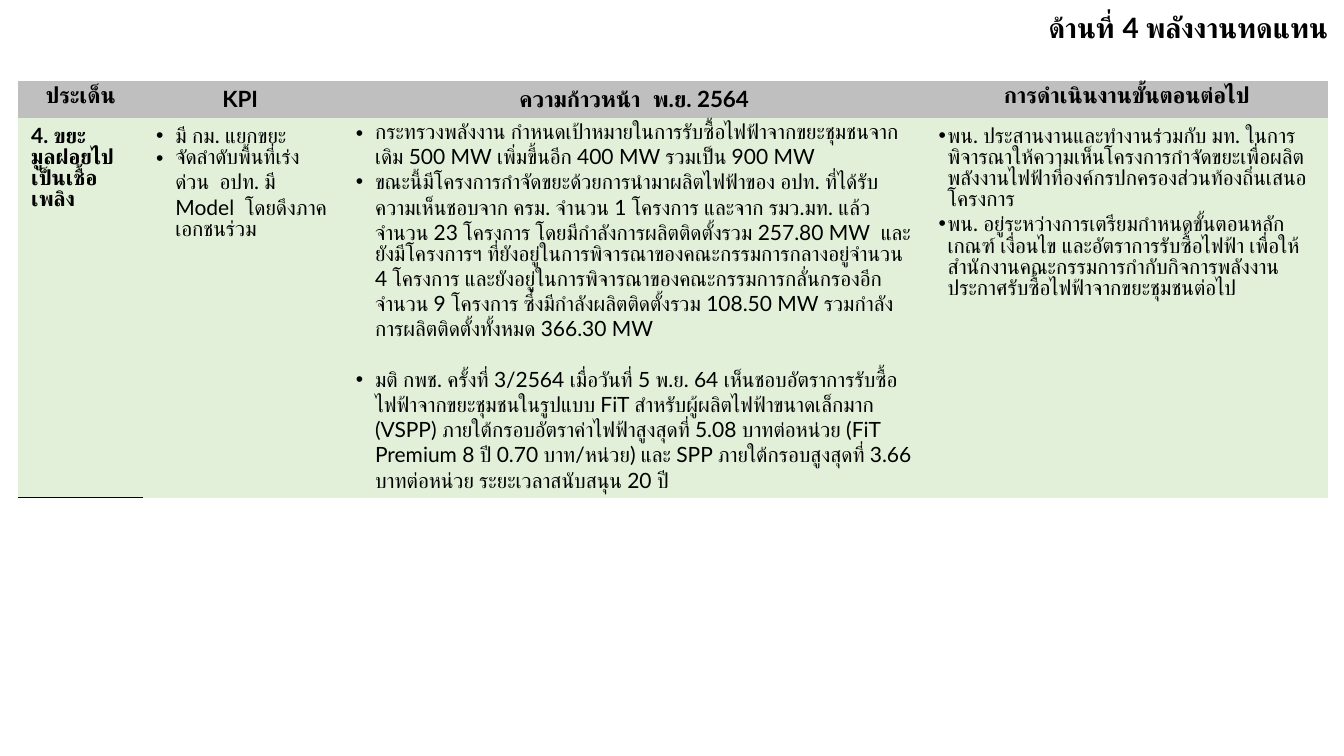
import pptx
import pptx.util
import pptx.dml.color
import pptx.enum.text
import pptx.oxml
import pptx.oxml.ns

COLOURS = {"text": "000000", "header": "BFBFBF", "body": "E2F0D9"}
ALIGN = pptx.enum.text.PP_ALIGN
PLAIN_TABLE = "{2D5ABB26-0587-4C30-8999-92F81FD0307C}"


class SlideBuilder:
    font = "Lato"
    scale = 9144

    def __init__(self, deck):
        self.page = deck.slides.add_slide(deck.slide_layouts[6])

    @classmethod
    def px(cls, length):
        return pptx.util.Emu(length * cls.scale)

    @staticmethod
    def colour(name):
        return pptx.dml.color.RGBColor.from_string(COLOURS[name])

    @staticmethod
    def xml(tag, attributes, content=""):
        namespace = pptx.oxml.ns.nsdecls("a")
        return pptx.oxml.parse_xml(f"<a:{tag} {namespace} {attributes}>{content}</a:{tag}>")

    def apply(self, target, values):
        for name, value in values.items():
            setattr(target, name, value)

    def margins(self, target, across, down):
        self.apply(target, {
            "margin_left": self.px(across), "margin_right": self.px(across),
            "margin_top": self.px(down), "margin_bottom": self.px(down),
        })

    def paragraphs(self, frame, texts, size, bold=False, align=ALIGN.LEFT, indent=0, gaps=None):
        for index, text in enumerate(texts):
            para = frame.paragraphs[0] if index == 0 else frame.add_paragraph()
            self.apply(para, {
                "alignment": align,
                "space_before": pptx.util.Pt((gaps or {}).get(index, 0)),
            })
            if indent:
                properties = para._p.get_or_add_pPr()
                properties.set("marL", str(self.px(indent)))
                properties.set("indent", str(-self.px(indent)))
                properties.append(self.xml("buFont", 'typeface="Arial"'))
                properties.append(self.xml("buChar", 'char="•"'))
            span = para.add_run()
            self.apply(span, {"text": text})
            self.apply(span.font, {"size": pptx.util.Pt(size), "bold": bold, "name": self.font})
            span.font.color.rgb = self.colour("text")

    def text(self, left, top, width, height, words, size, **style):
        box = self.page.shapes.add_textbox(*map(self.px, (left, top, width, height)))
        box.text_frame.word_wrap = True
        self.margins(box.text_frame, 17, 9)
        self.paragraphs(box.text_frame, [words], size, **style)

    def table(self, left, top, widths, heights):
        area = (left, top, sum(widths), sum(heights))
        frame = self.page.shapes.add_table(len(heights), len(widths), *map(self.px, area))
        grid = frame.table
        self.apply(grid, {"first_row": False, "horz_banding": False})
        grid._tbl.tblPr.find(pptx.oxml.ns.qn("a:tableStyleId")).text = PLAIN_TABLE
        for column, width in zip(grid.columns, widths):
            column.width = self.px(width)
        for row, height in zip(grid.rows, heights):
            row.height = self.px(height)
        return grid

    def cell(self, cell, texts, fill, size, **style):
        cell.fill.solid()
        cell.fill.fore_color.rgb = self.colour(fill)
        self.margins(cell, 13, 5)
        self.paragraphs(cell.text_frame, texts, size, **style)

    def bottom_border(self, cell, points):
        line = f'<a:solidFill><a:srgbClr val="{COLOURS["text"]}"/></a:solidFill>'
        width = pptx.util.Pt(points)
        cell._tc.get_or_add_tcPr().insert(0, self.xml("lnB", f'w="{width}"', line))


HEADERS = ["ประเด็น", "KPI ", "ความก้าวหน้า  พ.ย. 2564", "การดำเนินงานขั้นตอนต่อไป"]
ISSUE = ["4. ขยะมูลฝอยไปเป็นเชื้อเพลิง"]
KPIS = ["มี กม. แยกขยะ", "จัดลำดับพื้นที่เร่งด่วน  อปท. มี  Model  โดยดึงภาคเอกชนร่วม"]
PROGRESS = [
    "กระทรวงพลังงาน กำหนดเป้าหมายในการรับซื้อไฟฟ้าจากขยะชุมชนจากเดิม 500 MW "
    "เพิ่มขึ้นอีก 400 MW รวมเป็น 900 MW",
    "ขณะนี้มีโครงการกำจัดขยะด้วยการนำมาผลิตไฟฟ้าของ อปท. ที่ได้รับความเห็นชอบจาก ครม. "
    "จำนวน 1 โครงการ และจาก รมว.มท. แล้วจำนวน 23 โครงการ โดยมีกำลังการผลิตติดตั้งรวม "
    "257.80 MW  และยังมีโครงการฯ ที่ยังอยู่ในการพิจารณาของคณะกรรมการกลางอยู่จำนวน 4 โครงการ "
    "และยังอยู่ในการพิจารณาของคณะกรรมการกลั่นกรองอีกจำนวน 9 โครงการ "
    "ซึ่งมีกำลังผลิตติดตั้งรวม 108.50 MW รวมกำลังการผลิตติดตั้งทั้งหมด 366.30 MW",
    "มติ กพช. ครั้งที่ 3/2564 เมื่อวันที่ 5 พ.ย. 64 เห็นชอบอัตราการรับซื้อไฟฟ้าจากขยะชุมชนในรูปแบบ FiT "
    "สำหรับผู้ผลิตไฟฟ้าขนาดเล็กมาก (VSPP) ภายใต้กรอบอัตราค่าไฟฟ้าสูงสุดที่ 5.08 บาทต่อหน่วย "
    "(FiT Premium 8 ปี 0.70 บาท/หน่วย) และ SPP ภายใต้กรอบสูงสุดที่ 3.66 บาทต่อหน่วย "
    "ระยะเวลาสนับสนุน 20 ปี",
]
NEXT_STEPS = [
    "พน. ประสานงานและทำงานร่วมกับ มท. ในการพิจารณาให้ความเห็นโครงการกำจัดขยะ"
    "เพื่อผลิตพลังงานไฟฟ้าที่องค์กรปกครองส่วนท้องถิ่นเสนอโครงการ",
    "พน. อยู่ระหว่างการเตรียมกำหนดขั้นตอนหลักเกณฑ์ เงื่อนไข และอัตราการรับซื้อไฟฟ้า "
    "เพื่อให้สำนักงานคณะกรรมการกำกับกิจการพลังงานประกาศรับซื้อไฟฟ้าจากขยะชุมชนต่อไป",
]
BODY_CELLS = [
    (ISSUE, {"bold": True}),
    (KPIS, {"indent": 19}),
    (PROGRESS, {"indent": 19, "gaps": {2: 18}}),
    (NEXT_STEPS, {"indent": 9}),
]


def main():
    deck = pptx.Presentation()
    deck.slide_width, deck.slide_height = map(SlideBuilder.px, (1333, 750))
    slide = SlideBuilder(deck)
    grid = slide.table(18, 80, [124, 198, 578, 399], [37, 376])
    for column, header in enumerate(HEADERS):
        slide.cell(grid.cell(0, column), [header], "header", 16, bold=True, align=ALIGN.CENTER)
    for column, (texts, style) in enumerate(BODY_CELLS):
        slide.cell(grid.cell(1, column), texts, "body", 15, **style)
    slide.bottom_border(grid.cell(1, 0), 1)
    slide.text(79, 1, 1255, 51, "ด้านที่ 4 พลังงานทดแทน", 20, bold=True, align=ALIGN.RIGHT)
    deck.save("out.pptx")


if __name__ == "__main__":
    main()
